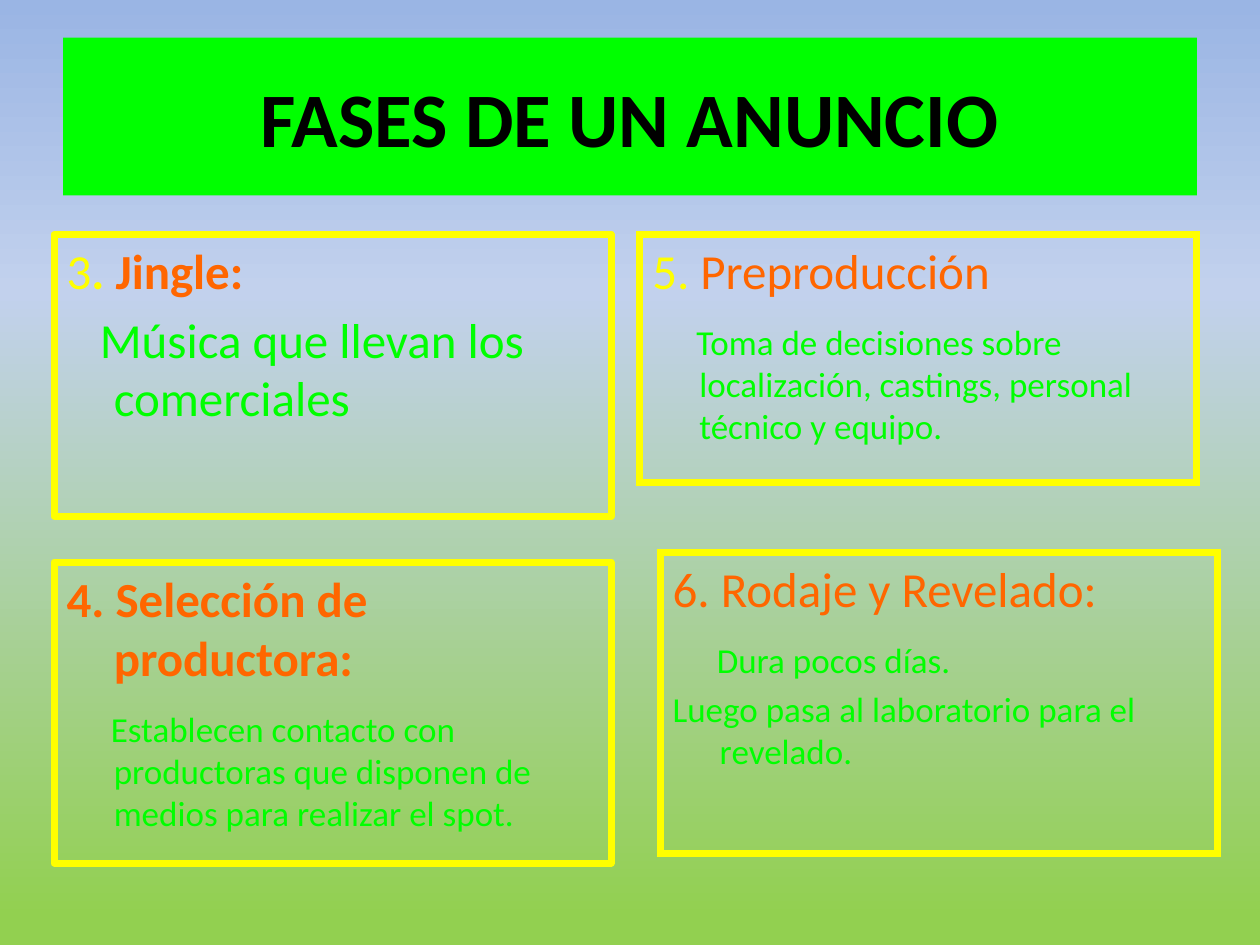
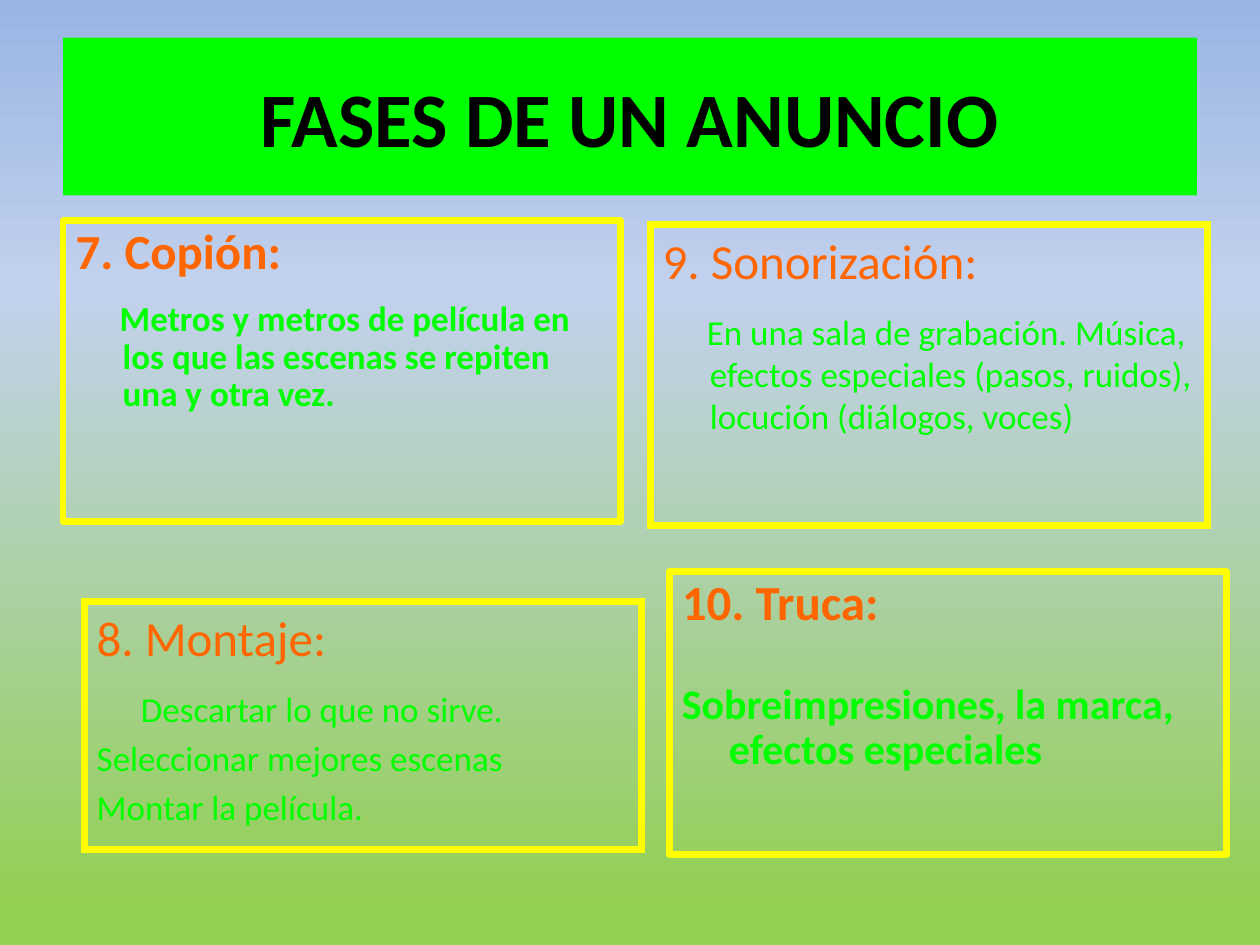
from dataclasses import dataclass
from lxml.etree import SubElement
from pptx import Presentation
from pptx.dml.color import RGBColor
from pptx.enum.text import MSO_ANCHOR, MSO_AUTO_SIZE, PP_ALIGN
from pptx.oxml.ns import qn
from pptx.util import Cm, Pt

FONT = "Calibri"
BLACK, GREEN, YELLOW, ORANGE = "000000", "00FF00", "FFFF00", "FF6600"
BACKGROUND = [(0, "9AB5E4"), (31, "C2D1ED"), (97, "92D050")]
TITLE = "FASES DE UN ANUNCIO"
TITLE_BOX = (1.27, 0.76, 22.86, 3.18)
PHASE_WIDTH = 11.23
HANGING = 0.95
HEADING_SIZE = 28


@dataclass
class Phase:
    """One phase of the advert; lengths in cm, sizes and gaps in points."""
    left: float
    top: float
    height: float
    heading: list  # (text, colour, bold)
    details: list
    bold: bool = False
    size: int = 20
    gap: float = 12
    first_line: float = -0.06
    line_spacing: float = 1.0
    in_placeholder: bool = False


SLIDES = [
    [
        Phase(1.09, 11.33, 6.07,
              [("4. Selección de productora:", ORANGE, True)],
              ["Establecen contacto con productoras que disponen de medios "
               "para realizar el spot."], in_placeholder=True),
        Phase(1.09, 4.72, 5.69,
              [("3", YELLOW, False), (". ", YELLOW, True),
               ("Jingle:", ORANGE, True)],
              ["Música que llevan los comerciales"],
              size=28, gap=5.6, first_line=-0.28, in_placeholder=True),
        Phase(12.9, 4.72, 5,
              [("5. ", YELLOW, False), ("Preproducción", ORANGE, False)],
              ["Toma de decisiones sobre localización, castings, personal "
               "técnico y equipo."]),
        Phase(13.31, 11.13, 6.07,
              [("6. Rodaje y Revelado:", ORANGE, False)],
              ["Dura pocos días.",
               "Luego pasa al laboratorio para el revelado."]),
    ],
    [
        Phase(1.27, 4.45, 6.07, [("7. Copión:", ORANGE, True)],
              ["Metros y metros de película en los que las escenas se repiten "
               "una y otra vez."],
              bold=True, line_spacing=0.9, in_placeholder=True),
        Phase(13.49, 11.53, 5.69, [("10. Truca:", ORANGE, True)],
              ["Sobreimpresiones, la marca, efectos especiales"],
              bold=True, size=24, gap=29.7, first_line=-HANGING,
              line_spacing=0.9, in_placeholder=True),
        Phase(1.7, 12.12, 5, [("8. Montaje:", ORANGE, False)],
              ["Descartar lo que no sirve.", "Seleccionar mejores escenas",
               "Montar la película."]),
        Phase(13.11, 4.52, 6.07, [("9. Sonorización:", ORANGE, False)],
              ["En una sala de grabación. Música, efectos especiales (pasos, "
               "ruidos), locución (diálogos, voces)"]),
    ],
]


def paint(color_format, color):
    color_format.rgb = RGBColor.from_string(color)


def set_background(master):
    fill = master.background.fill
    fill.gradient()
    fill.gradient_angle = 270
    stops = master.element.find(".//" + qn("p:bgPr")).find(".//" + qn("a:gsLst"))
    for stop in list(stops):
        stops.remove(stop)
    for position, color in BACKGROUND:
        stop = SubElement(stops, qn("a:gs"), pos=str(position * 1000))
        SubElement(stop, qn("a:srgbClr"), val=color)


def place(sp, left, top, width, height):
    sp.left, sp.top, sp.width, sp.height = map(Cm, (left, top, width, height))


def add_run(p, text, size, color, bold):
    r = p.add_run()
    r.text = text
    r.font.name, r.font.size, r.font.bold = FONT, Pt(size), bold
    paint(r.font.color, color)


def format_paragraph(p, first_line, before, line_spacing):
    """Indent the paragraph, space it and take its bullet away."""
    p.alignment = PP_ALIGN.LEFT
    p.line_spacing, p.space_before = line_spacing, Pt(before)
    pPr = p._p.get_or_add_pPr()
    pPr.set("marL", str(Cm(HANGING)))
    pPr.set("indent", str(Cm(first_line)))
    SubElement(pPr, qn("a:buNone"))


def add_title(s):
    sp = s.shapes.title
    place(sp, *TITLE_BOX)
    sp.fill.solid()
    paint(sp.fill.fore_color, GREEN)
    tf = sp.text_frame
    tf.vertical_anchor, tf.auto_size = MSO_ANCHOR.MIDDLE, MSO_AUTO_SIZE.NONE
    p = tf.paragraphs[0]
    p.alignment = PP_ALIGN.CENTER
    add_run(p, TITLE, 44, BLACK, True)


def fill_phase(sp, phase):
    place(sp, phase.left, phase.top, PHASE_WIDTH, phase.height)
    paint(sp.line.color, YELLOW)
    sp.line.width = Pt(4)
    if not phase.in_placeholder:
        SubElement(sp.line._get_or_add_ln(), qn("a:miter"), lim="800000")
    tf = sp.text_frame
    tf.word_wrap, tf.auto_size = True, MSO_AUTO_SIZE.NONE
    tf.vertical_anchor = MSO_ANCHOR.TOP

    p = tf.paragraphs[0]
    format_paragraph(p, -HANGING, HEADING_SIZE * 0.2, phase.line_spacing)
    for text, color, bold in phase.heading:
        add_run(p, text, HEADING_SIZE, color, bold)

    for i, text in enumerate(phase.details):
        p = tf.add_paragraph()
        first_line, before = ((-HANGING, phase.size * 0.2) if i
                              else (phase.first_line, phase.gap))
        format_paragraph(p, first_line, before, phase.line_spacing)
        add_run(p, text, phase.size, GREEN, phase.bold)


def add_phases_slide(prs, phases):
    s = prs.slides.add_slide(prs.slide_layouts.get_by_name("Two Content"))
    add_title(s)
    bodies = (ph for ph in s.placeholders if ph.placeholder_format.idx in (1, 2))
    for phase in phases:
        sp = next(bodies) if phase.in_placeholder else s.shapes.add_textbox(0, 0, 0, 0)
        fill_phase(sp, phase)


def main():
    prs = Presentation()
    prs.slide_width, prs.slide_height = Cm(25.4), Cm(19.05)
    set_background(prs.slide_master)
    for phases in SLIDES:
        add_phases_slide(prs, phases)
    prs.save("out.pptx")


if __name__ == "__main__":
    main()
